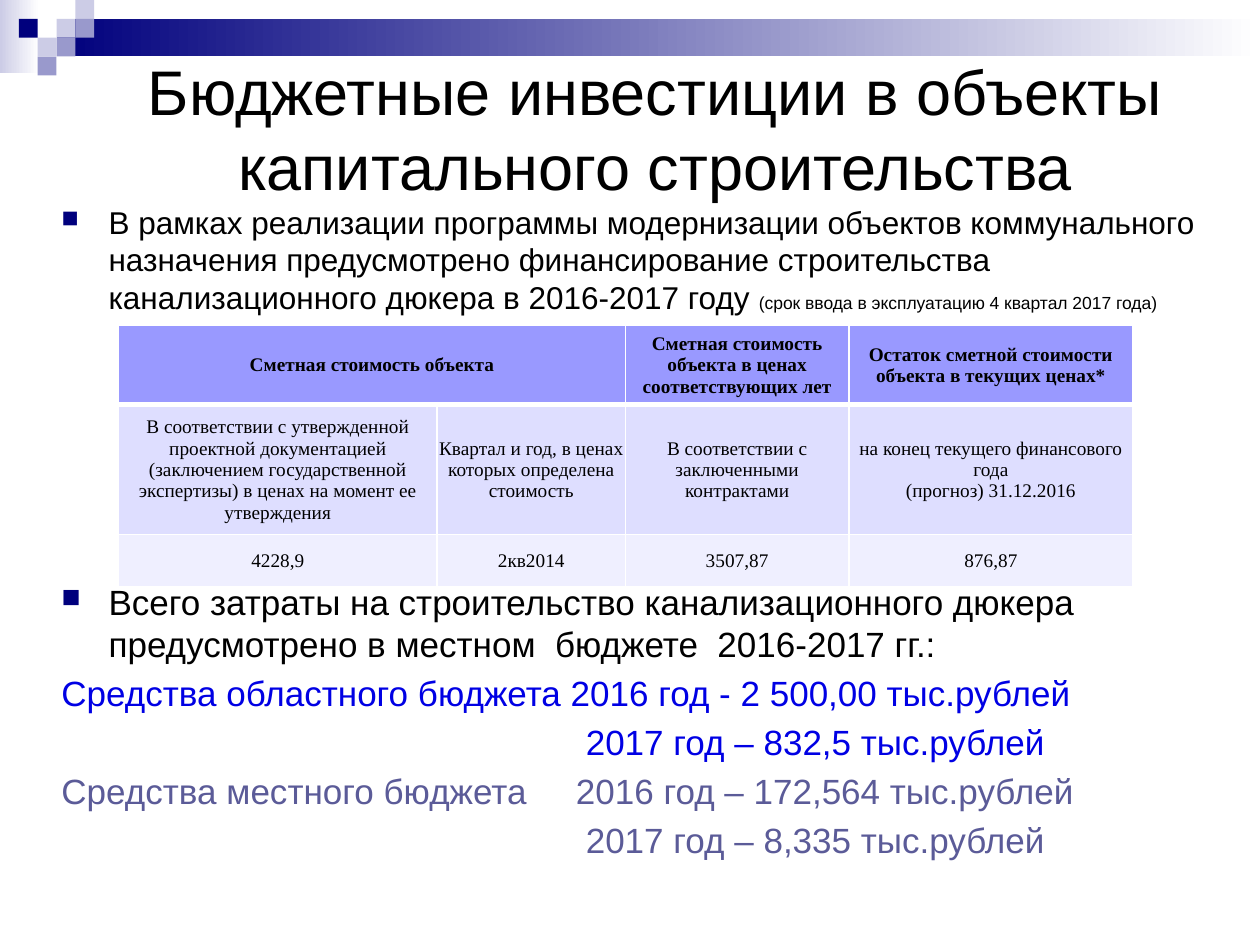
from dataclasses import dataclass

from lxml import etree
from pptx import Presentation
from pptx.dml.color import RGBColor
from pptx.enum import shapes, text
from pptx.oxml import ns
from pptx.util import Cm, Pt


@dataclass(frozen=True)
class Theme:
    navy: str = "00007D"
    violet: str = "9999CC"
    pale: str = "CCCCE6"
    white: str = "FFFFFF"
    ink: str = "000000"
    regional: str = "0000E4"
    local: str = "5B5B98"
    row_fills: tuple = ("9999FF", "DEDEFF", "EFEFFF")
    sans: str = "Arial"
    serif: str = "Times New Roman"
    title: int = 36
    intro: int = 18
    remark: int = 10
    totals: int = 20
    cell: int = 11


THEME = Theme()
UNIT = 0.38  # side of one square of the corner mosaic, cm
INDENT = 0.95
MOSAIC = [  # column, row, colour
    (3, 1, THEME.pale), (4, 0, THEME.pale), (4, 1, THEME.violet),
    (2, 2, THEME.pale), (1, 1, THEME.navy), (3, 2, THEME.violet),
    (2, 3, THEME.violet),
]
COLUMNS = (6.42, 3.8, 4.5, 5.73)
ROWS = (1.6, 2.62, 1.06)
COSTS = [
    ["Сметная стоимость объекта", "",
     "Сметная стоимость объекта в ценах соответствующих лет",
     "Остаток сметной стоимости объекта в текущих ценах*"],
    ["В соответствии с утвержденной проектной документацией (заключением "
     "государственной экспертизы) в ценах на момент ее утверждения",
     "Квартал и год, в ценах которых определена стоимость",
     "В соответствии с заключенными контрактами",
     "на конец текущего финансового года\n(прогноз) 31.12.2016"],
    ["4228,9", "2кв2014", "3507,87", "876,87"],
]
FUNDING = [  # wording, colour, tab stop of the year in cm
    ("Средства областного бюджета 2016 год - 2 500,00 тыс.рублей", THEME.regional, None),
    ("\t2017 год – 832,5 тыс.рублей", THEME.regional, 10.57),
    ("Средства местного бюджета\t2016 год – 172,564 тыс.рублей", THEME.local, 10.37),
    ("\t2017 год – 8,335 тыс.рублей", THEME.local, 10.57),
]


def rgb(value):
    return RGBColor.from_string(value)


def add_block(slide, left, top, width, height, *colours):
    """Rectangle in one colour, or fading from the first colour to the second."""
    block = slide.shapes.add_shape(
        shapes.MSO_SHAPE.RECTANGLE, Cm(left), Cm(top), Cm(width), Cm(height))
    block.shadow.inherit = False
    block.line.fill.background()
    if len(colours) == 1:
        block.fill.solid()
        block.fill.fore_color.rgb = rgb(colours[0])
        return
    block.fill.gradient()
    block.fill.gradient_angle = 0
    for stop, colour in zip(block.fill.gradient_stops, colours):
        stop.color.rgb = rgb(colour)


def add_text_frame(slide, left, top, width, height, anchor=text.MSO_ANCHOR.TOP):
    frame = slide.shapes.add_textbox(Cm(left), Cm(top), Cm(width), Cm(height)).text_frame
    frame.word_wrap = True
    frame.vertical_anchor = anchor
    return frame


def add_run(paragraph, wording, size, colour=THEME.ink, font=THEME.sans, bold=False):
    run = paragraph.add_run()
    run.text = wording
    run.font.size = Pt(size)
    run.font.name = font
    run.font.bold = bold
    run.font.color.rgb = rgb(colour)


def add_child(parent, tag, **attributes):
    return etree.SubElement(parent, ns.qn(tag), attributes)


def set_bullet(paragraph):
    props = paragraph._p.get_or_add_pPr()
    props.set("marL", str(Cm(INDENT)))
    props.set("indent", str(-Cm(INDENT)))
    add_child(add_child(props, "a:buClr"), "a:srgbClr", val=THEME.navy)
    add_child(props, "a:buSzPct", val="75000")
    add_child(props, "a:buChar", char="■")


def set_tab(paragraph, position):
    stops = add_child(paragraph._p.get_or_add_pPr(), "a:tabLst")
    add_child(stops, "a:tab", pos=str(Cm(position)), algn="l")


def set_borders(cell, bottom):
    props = cell._tc.get_or_add_tcPr()
    widths = {"a:lnL": 1, "a:lnR": 1, "a:lnT": 1, "a:lnB": bottom}
    for place, (tag, width) in enumerate(widths.items()):
        line = etree.Element(ns.qn(tag), w=str(Pt(width)))
        add_child(add_child(line, "a:solidFill"), "a:srgbClr", val=THEME.white)
        props.insert(place, line)


def fill_cell(cell, wording, row):
    header = row == 0
    cell.fill.solid()
    cell.fill.fore_color.rgb = rgb(THEME.row_fills[row])
    cell.vertical_anchor = text.MSO_ANCHOR.MIDDLE
    cell.margin_left = cell.margin_right = cell.margin_top = Cm(0.03)
    cell.margin_bottom = 0
    set_borders(cell, 3 if header else 1)
    paragraph = cell.text_frame.paragraphs[0]
    paragraph.alignment = text.PP_ALIGN.CENTER
    for number, line in enumerate(wording.split("\n")):
        if number:
            paragraph.add_line_break()
        if line:
            add_run(paragraph, line, THEME.cell, font=THEME.serif, bold=header)


def add_cost_table(slide):
    table = slide.shapes.add_table(
        len(ROWS), len(COLUMNS), Cm(2.39), Cm(6.55), Cm(sum(COLUMNS)), Cm(sum(ROWS))).table
    for column, width in zip(table.columns, COLUMNS):
        column.width = Cm(width)
    for row, height in zip(table.rows, ROWS):
        row.height = Cm(height)
    for r, wordings in enumerate(COSTS):
        for c, wording in enumerate(wordings):
            fill_cell(table.cell(r, c), wording, r)
    table.cell(0, 0).merge(table.cell(0, 1))


def add_header_band(slide):
    add_block(slide, 0, 0, 0.79, 1.47, THEME.pale, THEME.white)
    add_block(slide, 3 * UNIT, UNIT, 25.4 - 3 * UNIT, 2 * UNIT, THEME.navy, THEME.white)
    for column, row, colour in MOSAIC:
        add_block(slide, column * UNIT, row * UNIT, UNIT, UNIT, colour)


def add_title(slide):
    title = add_text_frame(slide, 1.78, 0, 22.86, 5.16, text.MSO_ANCHOR.MIDDLE).paragraphs[0]
    title.alignment = text.PP_ALIGN.CENTER
    add_run(title, "Бюджетные инвестиции в объекты капитального строительства", THEME.title)


def add_intro(slide):
    intro = add_text_frame(slide, 0.99, 3.96, 23.42, 2.6).paragraphs[0]
    set_bullet(intro)
    add_run(intro, "В рамках реализации программы модернизации объектов коммунального "
            "назначения предусмотрено финансирование строительства "
            "канализационного дюкера в 2016-2017 году ", THEME.intro)
    add_run(intro, "(срок ввода в эксплуатацию 4 квартал 2017 года)", THEME.remark)


def add_totals(slide):
    frame = add_text_frame(slide, 0.99, 11.58, 23.42, 6.5)
    heading = frame.paragraphs[0]
    set_bullet(heading)
    add_run(heading, "Всего затраты на строительство канализационного дюкера "
            "предусмотрено в местном  бюджете  2016-2017 гг.:", THEME.totals)
    for wording, colour, tab in FUNDING:
        line = frame.add_paragraph()
        line.space_before = Pt(THEME.totals * 0.2)
        if tab:
            set_tab(line, tab)
        add_run(line, wording, THEME.totals, colour)


def main():
    deck = Presentation()
    deck.slide_width, deck.slide_height = Cm(25.4), Cm(19.05)
    slide = deck.slides.add_slide(deck.slide_layouts[6])
    add_header_band(slide)
    add_title(slide)
    add_intro(slide)
    add_totals(slide)
    add_cost_table(slide)
    deck.save("out.pptx")


if __name__ == "__main__":
    main()
